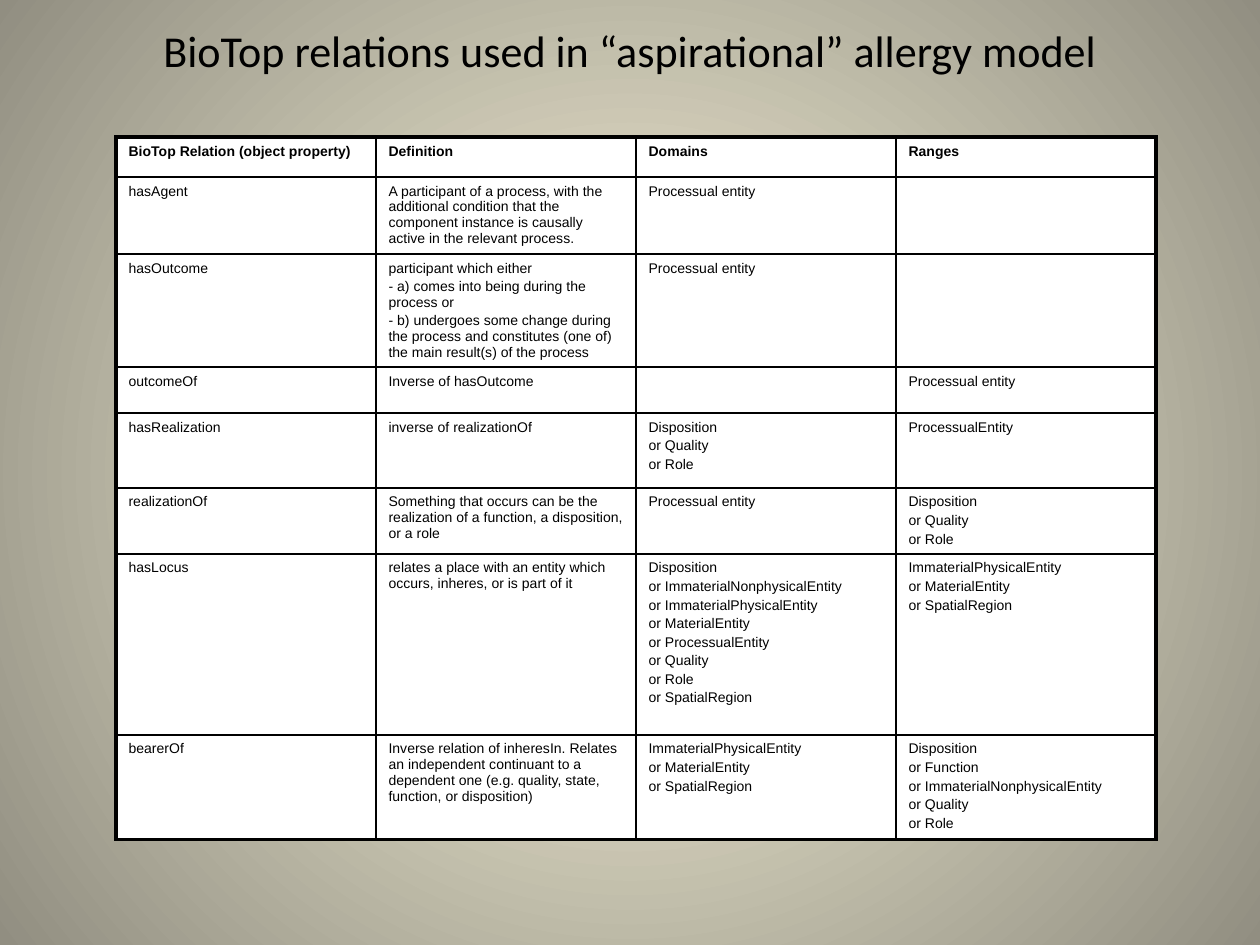
from dataclasses import dataclass

from lxml import etree
from pptx import Presentation
from pptx import util as u
from pptx.dml.color import RGBColor
from pptx.enum import text
from pptx.oxml.ns import qn

EMU_PER_PX = 914400 // 126


@dataclass(frozen=True)
class Theme:
    ink: str = "000000"
    paper: str = "FFFFFF"
    glow: str = "FCF7DD"
    shade: str = "918E81"
    title_font: str = "Calibri"
    table_font: str = "Arial"
    title_size: float = 25.2
    table_size: float = 8
    paragraph_gap: float = 1.6
    outer_line: float = 2.25
    inner_line: float = 1


THEME = Theme()

COLUMN_WIDTH = 260
ROW_HEIGHTS = [40, 77, 113, 46, 75, 66, 181, 105]
PROCESS = "Processual entity"
REALIZABLE = "Disposition\nor Quality\nor Role"
PHYSICAL = "ImmaterialPhysicalEntity\nor MaterialEntity\nor SpatialRegion"
RELATIONS = [
    ("BioTop Relation (object property)", "Definition", "Domains", "Ranges"),
    ("hasAgent",
     "A participant of a process, with the additional condition that the "
     "component instance is causally active in the relevant process.",
     PROCESS, ""),
    ("hasOutcome",
     "participant which either\n"
     "- a) comes into being during the process or\n"
     "- b) undergoes some change during the process and constitutes (one of) "
     "the main result(s) of the process",
     PROCESS, ""),
    ("outcomeOf", "Inverse of hasOutcome", "", PROCESS),
    ("hasRealization", "inverse of realizationOf", REALIZABLE, "ProcessualEntity"),
    ("realizationOf",
     "Something that occurs can be the realization of a function, "
     "a disposition, or a role",
     PROCESS, REALIZABLE),
    ("hasLocus",
     "relates a place with an entity which occurs, inheres, or is part of it",
     "Disposition\nor ImmaterialNonphysicalEntity\nor ImmaterialPhysicalEntity\n"
     "or MaterialEntity\nor ProcessualEntity\nor Quality\nor Role\nor SpatialRegion",
     PHYSICAL),
    ("bearerOf",
     "Inverse relation of inheresIn. Relates an independent continuant to a "
     "dependent one (e.g. quality, state, function, or disposition)",
     PHYSICAL,
     "Disposition\nor Function\nor ImmaterialNonphysicalEntity\nor Quality\nor Role"),
]


def px(length):
    return u.Emu(length * EMU_PER_PX)


def color(code):
    return RGBColor.from_string(code)


def style_font(font, name, size, bold=False):
    font.name = name
    font.size = u.Pt(size)
    font.bold = bold
    font.color.rgb = color(THEME.ink)


def paint_background(page):
    """Fill the page with a gradient that spreads in circles from the centre."""
    fill = page.background.fill
    fill.gradient()
    for stop, code in zip(fill.gradient_stops, (THEME.glow, THEME.shade)):
        stop.color.rgb = color(code)
    gradient = page._element.find(".//" + qn("a:gradFill"))
    gradient.remove(gradient.find(qn("a:lin")))
    circle = etree.SubElement(gradient, qn("a:path"), path="circle")
    etree.SubElement(circle, qn("a:fillToRect"),
                     {side: "50000" for side in "ltrb"})


def write_title(page, words):
    title = page.shapes.title
    title.left, title.top, title.width, title.height = map(px, (63, 21, 1134, 57))
    frame = title.text_frame
    frame.text = words
    frame.word_wrap = True
    frame.auto_size = text.MSO_AUTO_SIZE.NONE
    frame.vertical_anchor = text.MSO_ANCHOR.MIDDLE
    para = frame.paragraphs[0]
    para.alignment = text.PP_ALIGN.CENTER
    style_font(para.font, THEME.title_font, THEME.title_size)


def draw_borders(cell, outer_sides):
    properties = cell._tc.get_or_add_tcPr()
    for index, side in enumerate("LRTB"):
        width = THEME.outer_line if side in outer_sides else THEME.inner_line
        line = etree.Element(qn("a:ln" + side), w=str(u.Pt(width)))
        solid = etree.SubElement(line, qn("a:solidFill"))
        etree.SubElement(solid, qn("a:srgbClr"), val=THEME.ink)
        properties.insert(index, line)


def fill_cell(cell, words, bold):
    cell.fill.solid()
    cell.fill.fore_color.rgb = color(THEME.paper)
    cell.text = words
    for para in cell.text_frame.paragraphs:
        para.space_before = u.Pt(THEME.paragraph_gap)
        style_font(para.font, THEME.table_font, THEME.table_size, bold)
        if not words:  # an empty cell takes its line height from the end mark
            etree.SubElement(para._p, qn("a:endParaRPr"),
                             sz=str(int(THEME.table_size * 100)))


def add_relation_table(page, left, top):
    row_count, column_count = len(RELATIONS), len(RELATIONS[0])
    table = page.shapes.add_table(
        row_count, column_count, px(left), px(top),
        px(COLUMN_WIDTH * column_count), px(sum(ROW_HEIGHTS))).table
    table.first_row = table.horz_banding = False
    for column in table.columns:
        column.width = px(COLUMN_WIDTH)
    for r, (row, height) in enumerate(zip(table.rows, ROW_HEIGHTS)):
        row.height = px(height)
        for c, words in enumerate(RELATIONS[r]):
            cell = table.cell(r, c)
            fill_cell(cell, words, bold=r == 0)
            edges = {"L": c == 0, "R": c == column_count - 1,
                     "T": r == 0, "B": r == row_count - 1}
            draw_borders(cell, [side for side, outer in edges.items() if outer])


def main():
    deck = Presentation()
    deck.slide_width, deck.slide_height = px(1260), px(945)
    page = deck.slides.add_slide(deck.slide_layouts.get_by_name("Title Only"))
    paint_background(page)
    write_title(page, "BioTop relations used in “aspirational” allergy model")
    add_relation_table(page, 116, 137)
    deck.save("out.pptx")


if __name__ == "__main__":
    main()
